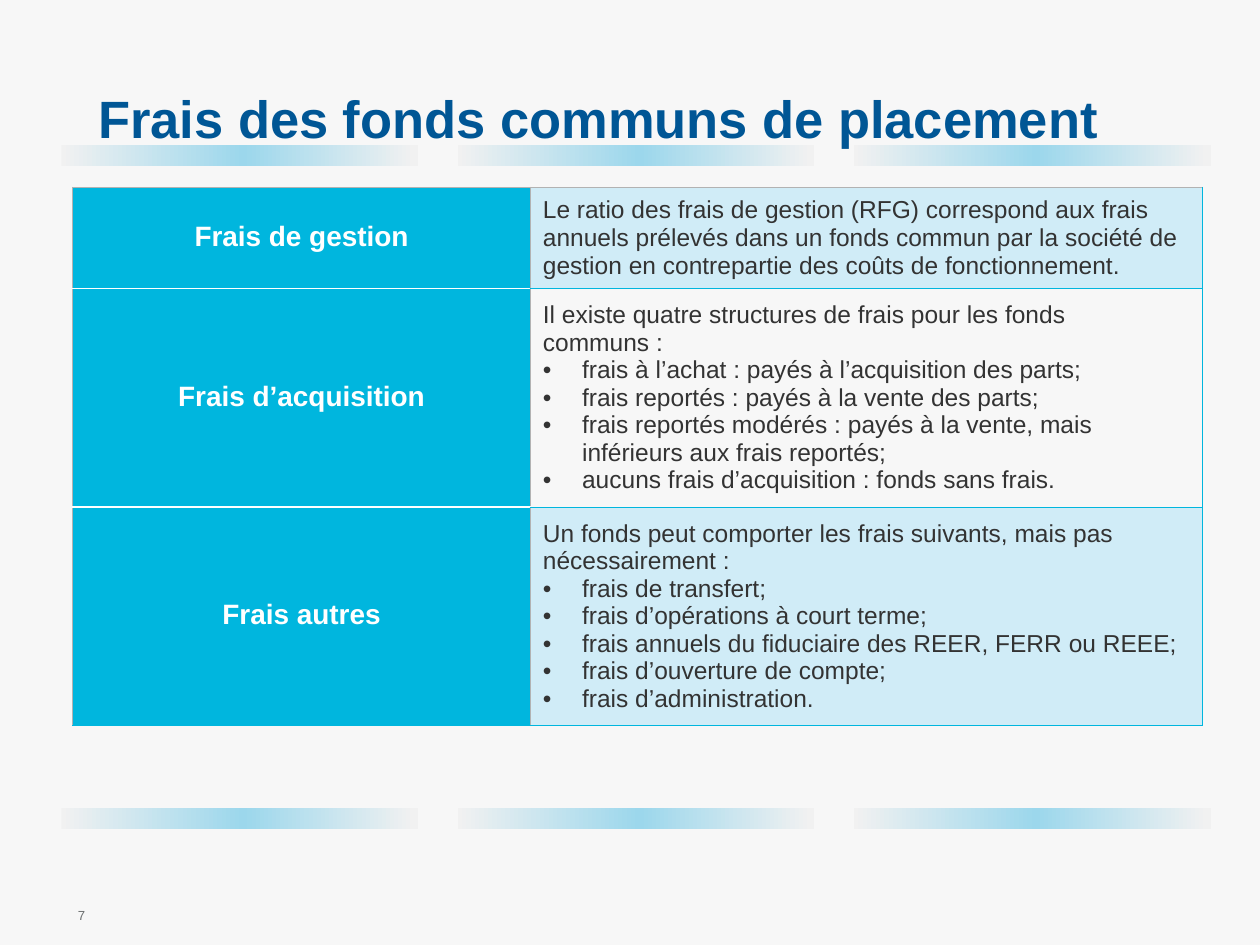
from dataclasses import dataclass

import pptx
import pptx.dml.color
import pptx.enum.shapes
import pptx.enum.text
import pptx.oxml
import pptx.oxml.ns
import pptx.util
from lxml import etree

Cm = pptx.util.Cm
Pt = pptx.util.Pt
Anchor = pptx.enum.text.MSO_ANCHOR
Align = pptx.enum.text.PP_ALIGN

CYAN = "00B6DE"
GREY = "B2B2B2"
WHITE = "FFFFFF"
PALE_BLUE = "D0ECF7"


@dataclass
class Style:
    size: float
    color: str
    bold: bool = False
    align: Align = Align.LEFT
    spacing: float = 1.0


@dataclass
class FeeRow:
    height: float
    label: str
    intro: str
    bullets: tuple[str, ...] = ()
    fill: str | None = PALE_BLUE


@dataclass
class Border:
    side: str
    color: str
    width: float


TITLE = Style(30, "005695", bold=True, spacing=0.85)
NUMBER = Style(7.5, "6C6F70")
LABEL = Style(16, WHITE, bold=True, align=Align.CENTER, spacing=0.9)
BODY = Style(14, "333333")

FEES = [
    FeeRow(
        1.92,
        "Frais de gestion",
        "Le ratio des frais de gestion (RFG) correspond aux frais annuels prélevés dans "
        "un fonds commun par la société de gestion en contrepartie des coûts de fonctionnement.",
    ),
    FeeRow(
        4.14,
        "Frais d’acquisition",
        "Il existe quatre structures de frais pour les fonds communs :",
        (
            "frais à l’achat : payés à l’acquisition des parts;",
            "frais reportés : payés à la vente des parts;",
            "frais reportés modérés : payés à la vente, mais inférieurs aux frais reportés;",
            "aucuns frais d’acquisition : fonds sans frais.",
        ),
        fill=None,
    ),
    FeeRow(
        4.15,
        "Frais autres",
        "Un fonds peut comporter les frais suivants, mais pas nécessairement :",
        (
            "frais de transfert;",
            "frais d’opérations à court terme;",
            "frais annuels du fiduciaire des REER, FERR ou REEE;",
            "frais d’ouverture de compte;",
            "frais d’administration.",
        ),
    ),
]


def rgb(color: str) -> pptx.dml.color.RGBColor:
    return pptx.dml.color.RGBColor.from_string(color)


def add_element(parent, tag: str, **attributes: str):
    element = etree.SubElement(parent, pptx.oxml.ns.qn(tag))
    for name, value in attributes.items():
        element.set(name, value)
    return element


def write_paragraph(paragraph, text: str, style: Style, bullet: bool = False) -> None:
    if bullet:
        properties = paragraph._p.get_or_add_pPr()
        indent = Cm(0.79)
        properties.set("marL", str(indent))
        properties.set("indent", str(-indent))
        add_element(properties, "a:buFont", typeface="Arial")
        add_element(properties, "a:buChar", char="•")
    paragraph.text = text
    paragraph.alignment = style.align
    paragraph.line_spacing = style.spacing
    paragraph.font.name = "Arial"
    paragraph.font.size = Pt(style.size)
    paragraph.font.bold = style.bold
    paragraph.font.color.rgb = rgb(style.color)


def add_text(slide, left: float, top: float, width: float, height: float,
             text: str, style: Style, anchor: Anchor) -> None:
    shape = slide.shapes.add_textbox(Cm(left), Cm(top), Cm(width), Cm(height))
    frame = shape.text_frame
    frame.word_wrap = True
    frame.vertical_anchor = anchor
    frame.margin_left = frame.margin_right = frame.margin_top = frame.margin_bottom = 0
    write_paragraph(frame.paragraphs[0], text, style)


def add_bar(slide, left: float, top: float) -> None:
    shape = slide.shapes.add_shape(
        pptx.enum.shapes.MSO_SHAPE.RECTANGLE, Cm(left), Cm(top), Cm(7.19), Cm(0.43))
    shape.shadow.inherit = False
    shape.line.fill.background()
    shape.fill.gradient()
    shape.fill.gradient_angle = 0
    stops = shape._element.spPr.find(".//" + pptx.oxml.ns.qn("a:gsLst"))
    for stop in list(stops):
        stops.remove(stop)
    for percent, color in ((0, "F1F1F1"), (51, "9CD7EC"), (99, "F1F1F1")):
        stop = add_element(stops, "a:gs", pos=str(percent * 1000))
        add_element(stop, "a:srgbClr", val=color)


def format_cell(cell, borders: list[Border], fill: str | None) -> None:
    cell.vertical_anchor = Anchor.MIDDLE
    properties = cell._tc.get_or_add_tcPr()
    for border in borders:
        line = add_element(properties, f"a:ln{border.side}", w=str(Pt(border.width)))
        add_element(add_element(line, "a:solidFill"), "a:srgbClr", val=border.color)
    if fill:
        cell.fill.solid()
        cell.fill.fore_color.rgb = rgb(fill)
    else:
        cell.fill.background()


def add_fee_table(slide, fees: list[FeeRow]) -> None:
    widths = (9.22, 13.54)
    table = slide.shapes.add_table(
        len(fees), len(widths), Cm(1.47), Cm(3.78),
        Cm(sum(widths)), Cm(sum(fee.height for fee in fees))).table
    table.first_row = False
    table.horz_banding = False
    for column, width in zip(table.columns, widths):
        column.width = Cm(width)
    for index, fee in enumerate(fees):
        table.rows[index].height = Cm(fee.height)
        first, last = index == 0, index == len(fees) - 1
        label, details = table.cell(index, 0), table.cell(index, 1)
        format_cell(label, [
            Border("L", GREY, 0.75),
            Border("R", GREY, 0.75),
            Border("T", GREY if first else WHITE, 0.75),
            Border("B", CYAN, 0.5) if last else Border("B", WHITE, 0.75),
        ], CYAN)
        format_cell(details, [
            Border("L", GREY, 0.75),
            Border("R", CYAN, 0.5),
            Border("T", GREY, 0.75) if first else Border("T", CYAN, 0.5),
            Border("B", CYAN, 0.5),
        ], fee.fill)
        write_paragraph(label.text_frame.paragraphs[0], fee.label, LABEL)
        write_paragraph(details.text_frame.paragraphs[0], fee.intro, BODY)
        for bullet in fee.bullets:
            write_paragraph(details.text_frame.add_paragraph(), bullet, BODY, bullet=True)


def main() -> None:
    presentation = pptx.Presentation()
    presentation.slide_width = Cm(25.4)
    presentation.slide_height = Cm(19.05)
    slide = presentation.slides.add_slide(presentation.slide_layouts[6])
    slide.background.fill.solid()
    slide.background.fill.fore_color.rgb = rgb("F7F7F7")

    add_text(slide, 1.57, 18.29, 1.37, 0.33, "7", NUMBER, Anchor.TOP)
    add_text(slide, 1.98, 1.27, 22.38, 2.39,
             "Frais des fonds communs de placement", TITLE, Anchor.MIDDLE)
    add_fee_table(slide, FEES)
    for column in range(3):
        for top in (2.92, 16.28):
            add_bar(slide, 1.24 + 7.99 * column, top)

    presentation.save("out.pptx")


if __name__ == "__main__":
    main()
